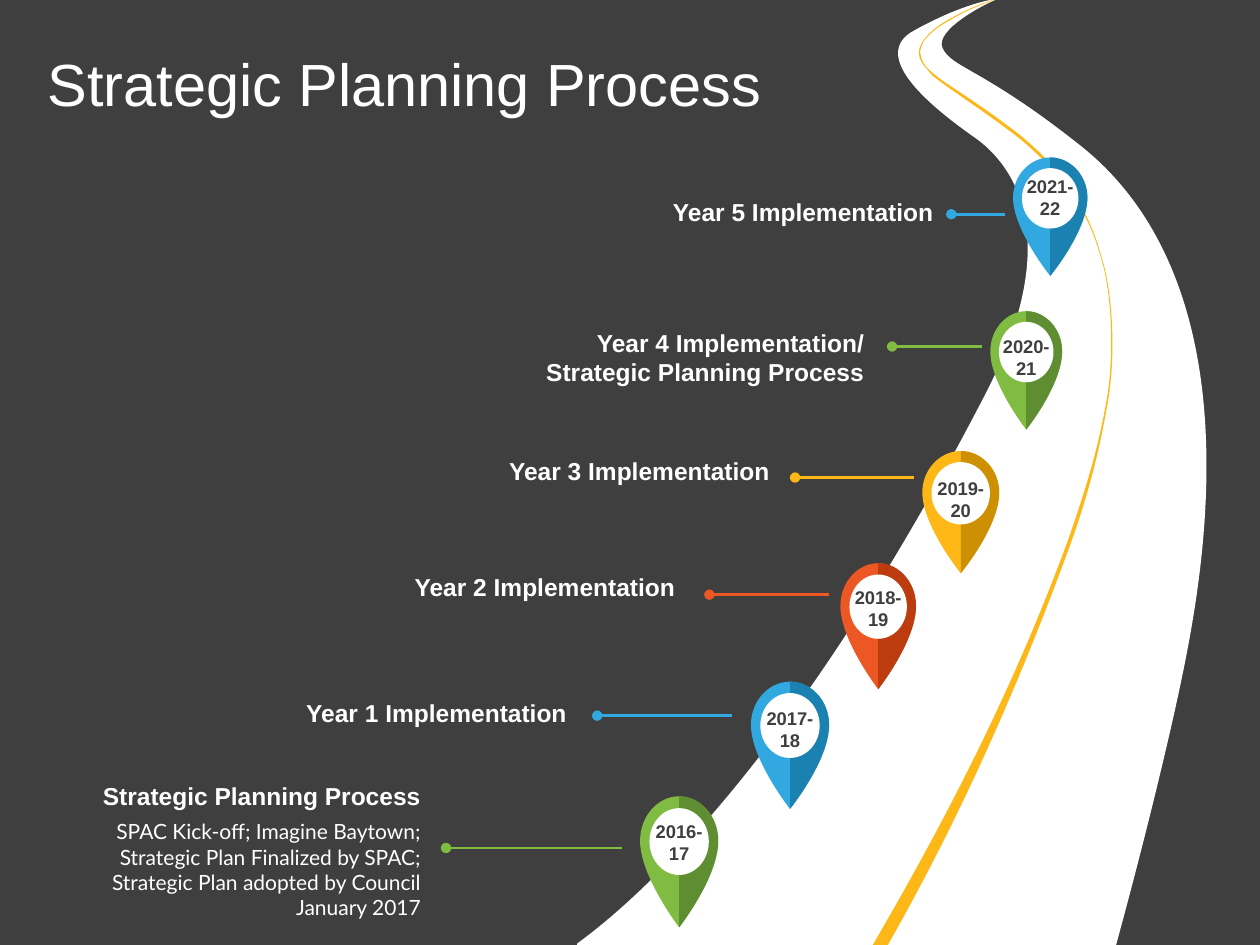
from dataclasses import dataclass

from lxml import etree
from pptx import Presentation
from pptx.dml.color import RGBColor
from pptx.enum.shapes import MSO_CONNECTOR, MSO_SHAPE
from pptx.enum.text import MSO_ANCHOR, MSO_AUTO_SIZE, PP_ALIGN
from pptx.oxml.ns import qn
from pptx.util import Inches, Pt

STRAIGHT = MSO_CONNECTOR.STRAIGHT
OVAL = MSO_SHAPE.OVAL
TOP = MSO_ANCHOR.TOP
NO_FIT = MSO_AUTO_SIZE.NONE
LEFT, MID, RIGHT = PP_ALIGN.LEFT, PP_ALIGN.CENTER, PP_ALIGN.RIGHT


@dataclass(frozen=True)
class Theme:
    dark: str = "3F3F3F"
    white: str = "FFFFFF"
    gold: tuple = ("FDB817", "CD9002")
    green: tuple = ("7FBC41", "5F8D31")
    blue: tuple = ("31A8DF", "1B81B1")
    red: tuple = ("EC5724", "BC3C10")
    font: str = "Arial"
    note_font: str = "Lato"
    title: float = 34
    head: float = 14
    note: float = 12
    date: float = 10.5
    line: float = 1.5


THEME = Theme()

ROAD = [
    (8.58, 1.16),
    (7.8, 0.54, 7.55, 0.54, 7.48, 0.38),
    (7.42, 0.24, 7.8, 0.04, 7.9, 0),
    (7.86, 0),
    (7.76, 0.02, 7.55, 0.08, 7.26, 0.24),
    (6.9, 0.43, 7.35, 0.82, 7.72, 1.08),
    (8.09, 1.33, 8.44, 1.94, 7.81, 3.15),
    (6.28, 6.1, 5.02, 7.17, 4.58, 7.49),
    (4.58, 7.53),
    (8.85, 7.53),
    (9.07, 6.73, 9.31, 5.76, 9.42, 5.18),
    (9.84, 3.01, 9.36, 1.78, 8.58, 1.16),
]
STRIPE = [
    (8.74, 2.03),
    (8.65, 1.71, 8.53, 1.54, 8.42, 1.39),
    (8.3, 1.25, 8.19, 1.15, 8.08, 1.06),
    (7.86, 0.89, 7.66, 0.76, 7.48, 0.64),
    (7.44, 0.61, 7.4, 0.58, 7.36, 0.54),
    (7.34, 0.52, 7.32, 0.49, 7.31, 0.45),
    (7.29, 0.4, 7.32, 0.36, 7.33, 0.33),
    (7.4, 0.24, 7.47, 0.2, 7.54, 0.16),
    (7.71, 0.06, 7.84, 0.02, 7.89, 0),
    (7.88, 0),
    (7.82, 0.02, 7.7, 0.06, 7.54, 0.15),
    (7.47, 0.19, 7.4, 0.23, 7.33, 0.32),
    (7.32, 0.34, 7.28, 0.38, 7.3, 0.46),
    (7.32, 0.51, 7.34, 0.53, 7.36, 0.55),
    (7.39, 0.6, 7.44, 0.63, 7.48, 0.66),
    (7.66, 0.79, 7.86, 0.92, 8.08, 1.09),
    (8.18, 1.17, 8.3, 1.28, 8.41, 1.42),
    (8.53, 1.56, 8.65, 1.73, 8.74, 2.05),
    (8.83, 2.35, 8.85, 2.87, 8.77, 3.25),
    (8.7, 3.63, 8.59, 3.96, 8.48, 4.28),
    (8.04, 5.48, 7.5, 6.52, 6.91, 7.53),
    (7.03, 7.53),
    (7.6, 6.53, 8.06, 5.51, 8.5, 4.31),
    (8.61, 4, 8.71, 3.66, 8.78, 3.26),
    (8.86, 2.88, 8.84, 2.34, 8.74, 2.03),
]
DROP = [
    (1, 0.34),
    (1, 0.62, 0.5, 1, 0.5, 1),
    (0.5, 1, 0, 0.61, 0, 0.34),
    (0, 0.15, 0.23, 0, 0.5, 0),
    (0.77, 0, 1, 0.15, 1, 0.34),
]
HALF = [(0.5, 0), (0.5, 1), (0.5, 1, 1, 0.62, 1, 0.34), (1, 0.15, 0.77, 0, 0.5, 0)]

STOPS = [
    (["2016-", "17"], THEME.green, (5.08, 6.32, 0.62, 1.04), 6.46, (4.94, 3.54, 6.73)),
    (["2017-", "18"], THEME.blue, (5.96, 5.41, 0.62, 1.01), 5.56, (5.81, 4.74, 5.68)),
    (["2018-19"], THEME.red, (6.67, 4.47, 0.6, 1), 4.6, (6.58, 5.63, 4.72)),
    (["2019- 20"], THEME.gold, (7.32, 3.58, 0.61, 0.97), 3.74, (7.25, 6.31, 3.79)),
    (["2020- 21"], THEME.green, (7.86, 2.47, 0.57, 0.94), 2.61, (7.79, 7.08, 2.75)),
    (["2021-", "22"], THEME.blue, (8.04, 1.25, 0.59, 0.94), 1.34, (7.98, 7.55, 1.7)),
]
HEADS = [
    (["Year 1 Implementation"], (2.34, 5.5, 2.24, 0.31)),
    (["Year 2 Implementation"], (3.2, 4.5, 2.24, 0.31)),
    (["Year 3 Implementation"], (3.95, 3.58, 2.24, 0.31)),
    (["Year 4 Implementation/", "Strategic Planning Process"], (4.25, 2.56, 2.69, 0.55)),
    (["Year 5 Implementation"], (5.25, 1.52, 2.24, 0.31)),
]


def rgb(tone):
    return RGBColor.from_string(tone)


def write(frame, lines, size, tone=THEME.white, font=THEME.font, bold=False,
          align=RIGHT, inset=(0.1, 0.05), wrap=True, space=None):
    frame.word_wrap = wrap
    frame.auto_size = NO_FIT
    frame.vertical_anchor = TOP
    frame.margin_left = frame.margin_right = Inches(inset[0])
    frame.margin_top = frame.margin_bottom = Inches(inset[1])
    for i, line in enumerate(lines):
        para = frame.add_paragraph() if i else frame.paragraphs[0]
        para.alignment = align
        para.line_spacing = space
        run = para.add_run()
        run.text = line
        run.font.size = Pt(size)
        run.font.name = font
        run.font.bold = bold
        run.font.color.rgb = rgb(tone)


class Deck:
    def __init__(self, theme):
        self.theme = theme
        self.file = Presentation()
        self.file.slide_width, self.file.slide_height = Inches(10), Inches(7.5)
        self.slide = self.file.slides.add_slide(self.file.slide_layouts[5])
        self.shapes = self.slide.shapes
        ground = self.slide.background.fill
        ground.solid()
        ground.fore_color.rgb = rgb(theme.dark)

    def title(self, text, box):
        shape = self.shapes.title
        shape.left, shape.top, shape.width, shape.height = map(Inches, box)
        write(shape.text_frame, [text], self.theme.title, align=LEFT,
              inset=(0.08, 0.04), space=0.9)

    def text(self, lines, box, size, **style):
        shape = self.shapes.add_textbox(*map(Inches, box))
        write(shape.text_frame, lines, size, **style)

    def paint(self, shape, tone):
        shape.shadow.inherit = False
        shape.fill.solid()
        shape.fill.fore_color.rgb = rgb(tone)
        shape.line.fill.background()

    def curve(self, route, tone, box=(0, 0, 1, 1)):
        x, y, w, h = box
        parts = [[(Inches(x + w * a), Inches(y + h * b))
                  for a, b in zip(part[::2], part[1::2])] for part in route]
        pen = self.shapes.build_freeform(*parts[0][0])
        pen.add_line_segments([part[-1] for part in parts[1:]], close=True)
        shape = pen.convert_to_shape()
        sides = list(shape._element.iter(qn("a:lnTo")))
        for side, part in zip(sides, parts[1:]):
            if len(part) == 3:
                side.tag = qn("a:cubicBezTo")
                side.remove(side[0])
                for a, b in part:
                    etree.SubElement(side, qn("a:pt"), x=str(a - shape.left),
                                     y=str(b - shape.top))
        self.paint(shape, tone)

    def disc(self, box, tone):
        self.paint(self.shapes.add_shape(OVAL, *map(Inches, box)), tone)

    def line(self, start, end, y, tone):
        rule = self.shapes.add_connector(STRAIGHT, *map(Inches, (start, y, end, y)))
        rule.line.color.rgb = rgb(tone)
        rule.line.width = Pt(self.theme.line)
        etree.SubElement(rule.line._get_or_add_ln(), qn("a:tailEnd"), type="oval")
        etree.SubElement(rule._element.spPr, qn("a:effectLst"))

    def pin(self, date, tones, box, top):
        x, y, w, h = box
        self.curve(DROP, tones[0], box)
        self.curve(HALF, tones[1], box)
        self.disc((x + 0.12 * w, y + 0.09 * h, 0.76 * w, 0.51 * h), self.theme.white)
        self.text(date, (x + w / 2 - 0.3, top, 0.6, 0.45), self.theme.date,
                  tone=self.theme.dark, bold=True, align=MID)


def main():
    deck = Deck(THEME)
    deck.title("Strategic Planning Process", (0.3, 0.4, 6.41, 2.76))
    deck.curve(ROAD, THEME.white)
    deck.curve(STRIPE, THEME.gold[0])
    deck.text(["SPAC Kick-off; Imagine Baytown; Strategic Plan Finalized by SPAC; "
               "Strategic Plan adopted by Council January 2017"],
              (0.41, 6.45, 3.03, 0.91), THEME.note, font=THEME.note_font)
    deck.text(["Strategic Planning Process"], (0.7, 6.15, 2.74, 0.34), THEME.head,
              bold=True, wrap=False)
    for lines, box in HEADS:
        deck.text(lines, box, THEME.head, bold=True, inset=(0.08, 0.04), wrap=False)
    for date, tones, box, top, rule in STOPS:
        deck.line(*rule, tones[0])
        deck.pin(date, tones, box, top)
    deck.file.save("out.pptx")


if __name__ == "__main__":
    main()
